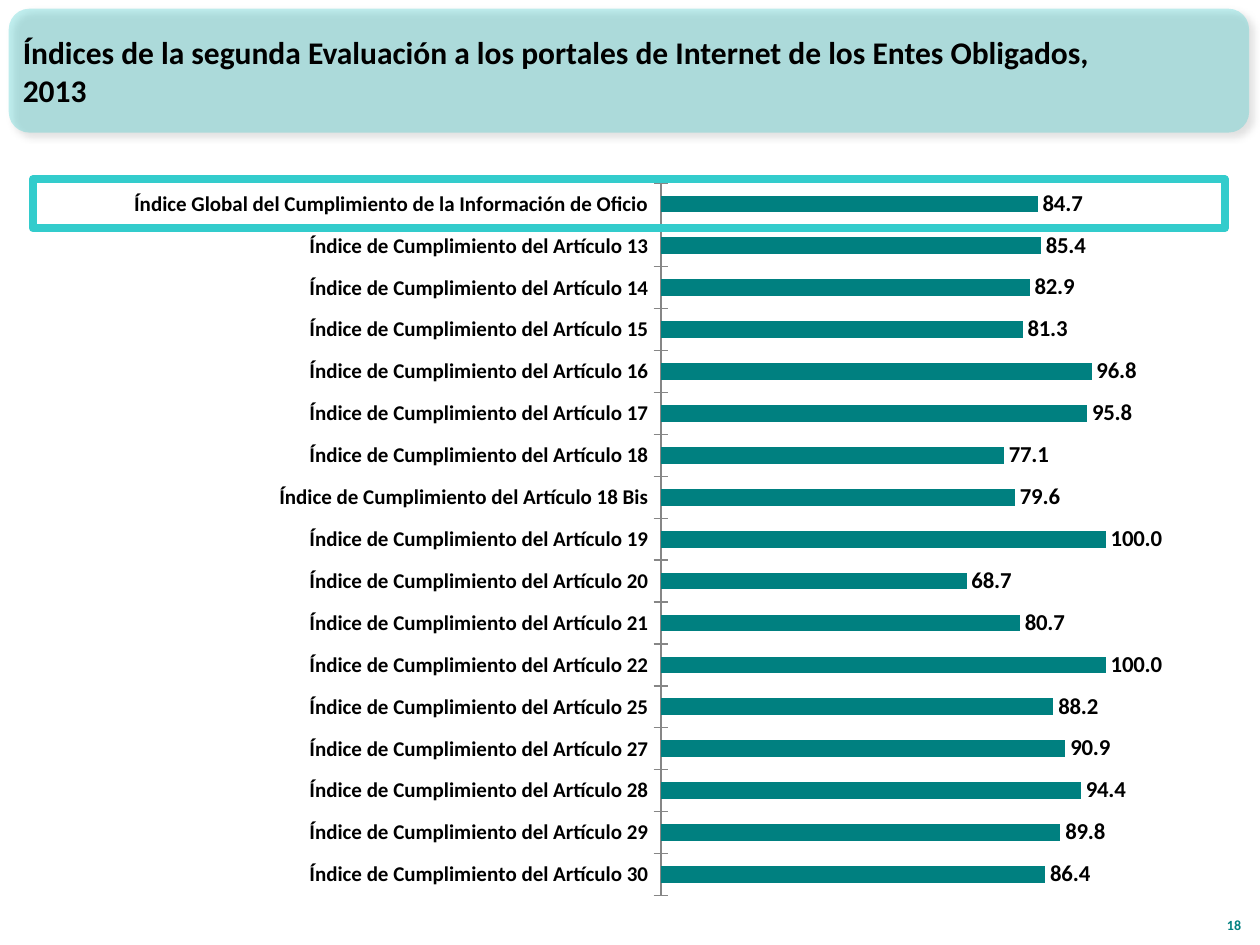
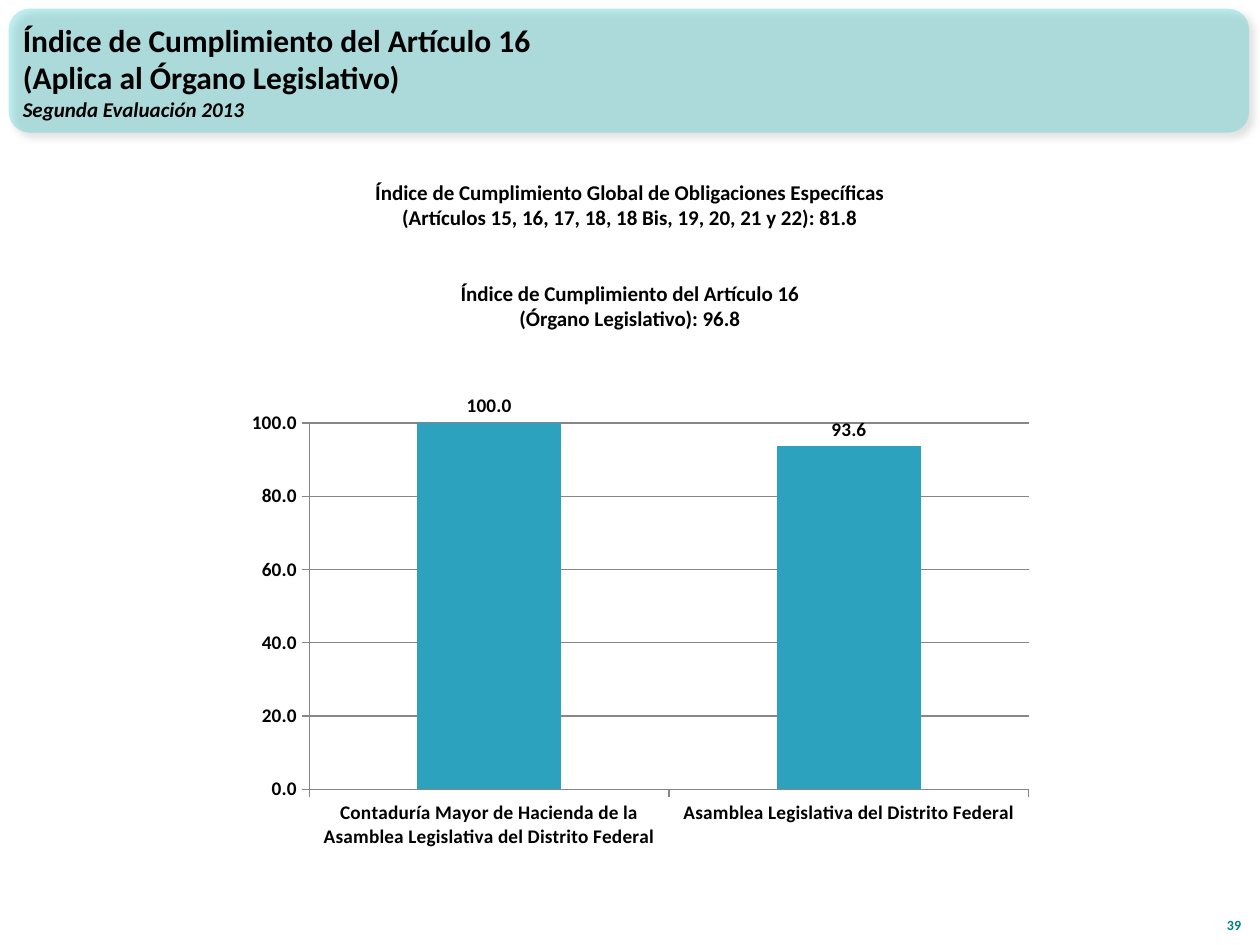
from dataclasses import dataclass

from lxml import etree
from pptx import Presentation
from pptx.chart.data import CategoryChartData
from pptx.dml.color import RGBColor
from pptx.enum.chart import XL_CHART_TYPE as CT, XL_LABEL_POSITION as LP, XL_TICK_MARK as TM
from pptx.enum.shapes import MSO_SHAPE as MS
from pptx.enum.text import MSO_ANCHOR as MA, MSO_AUTO_SIZE as AS, PP_ALIGN as AL
from pptx.oxml import parse_xml
from pptx.oxml.ns import nsdecls, qn
from pptx.util import Pt


@dataclass(frozen=True)
class Theme:
    font: str = "Calibri"
    ink: str = "000000"
    aqua: str = "33CCCC"
    teal: str = "008080"
    blue: str = "2DA2BF"
    axis: str = "868686"
    title: int = 18
    text: int = 12
    number: int = 8


T = Theme()
TITLE_BOX = (5.8, 6.7, 660.2, 67.7)
NUMBER_BOX = (687.6, 508.3, 28.8, 28.8)


def rgb(value):
    return RGBColor.from_string(value)


def points(box):
    return [Pt(v) for v in box]


def style(font, size, color=T.ink, italic=None):
    font.name, font.size, font.bold, font.italic = T.font, Pt(size), True, italic
    font.color.rgb = rgb(color)


def write(tf, lines, align, color=T.ink):
    tf.word_wrap = True
    tf.auto_size = AS.NONE
    for i, (text, size, italic) in enumerate(lines):
        p = tf.paragraphs[0] if i == 0 else tf.add_paragraph()
        p.alignment = align
        r = p.add_run()
        r.text = text
        style(r.font, size, color, italic)
    return tf


def add_band(s, layout, box):
    sp = s.shapes.add_shape(MS.ROUNDED_RECTANGLE, *points(box))
    sp.fill.solid()
    sp.fill.fore_color.rgb = rgb(T.aqua)
    sp.line.fill.background()
    pr = sp.element.spPr
    color = pr.find(qn("a:solidFill"))[0]
    etree.SubElement(color, qn("a:alpha"), val="30000")
    pr.append(parse_xml(
        f'<a:effectLst {nsdecls("a")}><a:outerShdw blurRad="{Pt(4)}" dist="{Pt(3)}" '
        f'dir="2700000" algn="tl" rotWithShape="0"><a:srgbClr val="{T.ink}">'
        '<a:alpha val="40000"/></a:srgbClr></a:outerShdw></a:effectLst>'))
    next_id = max(shape.shape_id for shape in layout.shapes) + 1
    sp.element.nvSpPr.cNvPr.set("id", str(next_id))
    layout.placeholders[0].element.addprevious(sp.element)


def add_title(s, lines):
    sp = s.shapes.title
    sp.left, sp.top, sp.width, sp.height = points(TITLE_BOX)
    write(sp.text_frame, lines, AL.LEFT).vertical_anchor = MA.MIDDLE


def add_number(s, number):
    sp = s.shapes.add_textbox(*points(NUMBER_BOX))
    tf = write(sp.text_frame, [(number, T.number, None)], AL.RIGHT, T.teal)
    tf.vertical_anchor = MA.BOTTOM


def set_plot_area(chart, plot_box):
    area = chart.element.chart.plotArea
    for old in area.findall(qn("c:layout")):
        area.remove(old)
    sizes = "".join(f'<c:{k} val="{v}"/>' for k, v in zip("xywh", plot_box))
    modes = "".join(f'<c:{k}Mode val="edge"/>' for k in "xy")
    area.insert(0, parse_xml(
        f'<c:layout {nsdecls("c")}><c:manualLayout><c:layoutTarget val="inner"/>'
        f'{modes}{sizes}</c:manualLayout></c:layout>'))


def add_bars(s, kind, box, plot_box, values, color, size, overlap=0):
    data = CategoryChartData(number_format="0.0")
    data.categories = list(values)
    data.add_series("Series 1", list(values.values()))
    chart = s.shapes.add_chart(kind, *points(box), data).chart
    chart.has_title = chart.has_legend = False
    style(chart.font, size)
    set_plot_area(chart, plot_box)

    plot = chart.plots[0]
    plot.gap_width, plot.overlap, plot.vary_by_categories = 150, overlap, False
    fill = plot.series[0].format.fill
    fill.solid()
    fill.fore_color.rgb = rgb(color)
    plot.has_data_labels = True
    labels = plot.data_labels
    labels.show_value, labels.position = True, LP.OUTSIDE_END
    labels.number_format, labels.number_format_is_linked = "0.0", False
    style(labels.font, size)

    axis = chart.value_axis
    axis.minimum_scale, axis.maximum_scale = 0, 100
    axis.has_major_gridlines = False
    axis.tick_labels.number_format = "0.0"
    axis.tick_labels.number_format_is_linked = False
    for ax in (axis, chart.category_axis):
        ax.format.line.color.rgb = rgb(T.axis)
        ax.minor_tick_mark = TM.NONE
    return chart


def add_index_chart(s, box):
    left, top, width, height = box
    articles = {
        "13": 85.4, "14": 82.9, "15": 81.3, "16": 96.8, "17": 95.8, "18": 77.1,
        "18 Bis": 79.6, "19": 100, "20": 68.7, "21": 80.7, "22": 100, "25": 88.2,
        "27": 90.9, "28": 94.4, "29": 89.8, "30": 86.4,
    }
    values = {"Índice Global del Cumplimiento de la Información de Oficio": 84.7}
    values |= {f"Índice de Cumplimiento del Artículo {k}": v for k, v in articles.items()}
    chart = add_bars(s, CT.BAR_CLUSTERED, box, (0.527, 0.021, 0.394, 0.952),
                     values, T.teal, 13, -25)
    chart.value_axis.visible = False
    ax = chart.category_axis
    ax.reverse_order = True
    ax.major_tick_mark = TM.CROSS
    style(ax.tick_labels.font, T.text)

    sp = s.shapes.add_shape(MS.RECTANGLE, *points((left - 19, top + 6.8, width + 36, 28.1)))
    sp.shadow.inherit = False
    sp.fill.background()
    sp.line.color.rgb = rgb(T.aqua)
    sp.line.width = Pt(4.5)


def add_summary(s, box):
    lines = [
        "Índice de Cumplimiento Global de Obligaciones Específicas",
        "(Artículos 15, 16, 17, 18, 18 Bis, 19, 20, 21 y 22): 81.8",
        "Índice de Cumplimiento del Artículo 16",
        "(Órgano Legislativo): 96.8",
    ]
    sp = s.shapes.add_textbox(*points(box))
    tf = write(sp.text_frame, [(line, T.text, None) for line in lines], AL.CENTER)
    tf.paragraphs[2].space_before = Pt(29)


def add_article_chart(s, box):
    values = {
        "Contaduría Mayor de Hacienda de la Asamblea Legislativa del Distrito Federal": 100,
        "Asamblea Legislativa del Distrito Federal": 93.6,
    }
    chart = add_bars(s, CT.COLUMN_CLUSTERED, box, (0.137, 0.08, 0.831, 0.738),
                     values, T.blue, 11)
    axis = chart.value_axis
    axis.major_unit = 20
    axis.has_major_gridlines = True
    axis.major_gridlines.format.line.color.rgb = rgb(T.axis)
    for ax in (axis, chart.category_axis):
        ax.major_tick_mark = TM.OUTSIDE


def global_slide(s):
    add_title(s, [("Índices de la segunda Evaluación a los portales de Internet "
                   "de los Entes Obligados, 2013", T.title, None)])
    add_index_chart(s, (37.8, 95.6, 645.1, 427.7))
    add_number(s, "18")


def article_slide(s):
    add_title(s, [("Índice de Cumplimiento del Artículo 16", T.title, None),
                  ("(Aplica al Órgano Legislativo)", T.title, None),
                  ("Segunda Evaluación 2013", T.text, True)])
    add_summary(s, (78.8, 98.8, 562.3, 94.3))
    add_article_chart(s, (109, 219, 494.8, 283.7))
    add_number(s, "39")


def main():
    prs = Presentation()
    prs.slide_width, prs.slide_height = Pt(720), Pt(540)
    layout = prs.slide_layouts[5]
    first, second = [prs.slides.add_slide(layout) for _ in range(2)]
    add_band(first, layout, (5, 5, 708.8, 70.8))
    global_slide(first)
    article_slide(second)
    prs.save("out.pptx")


if __name__ == "__main__":
    main()
